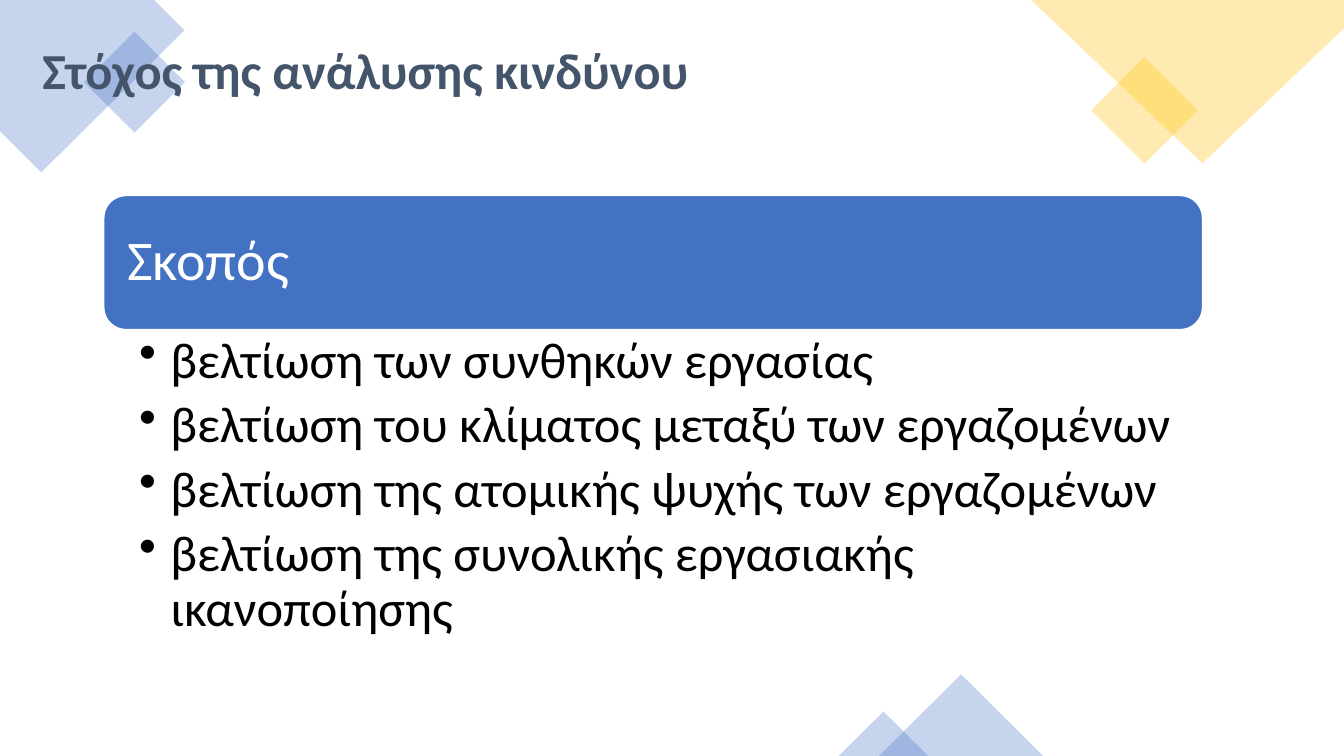
"""Build the slide on the goal of risk analysis."""
from dataclasses import dataclass

import lxml.etree
import pptx
import pptx.dml.color
import pptx.enum.shapes
import pptx.enum.text
import pptx.oxml.ns
import pptx.util

Pt = pptx.util.Pt
MSO_SHAPE = pptx.enum.shapes.MSO_SHAPE
ANCHOR = pptx.enum.text.MSO_ANCHOR


@dataclass(frozen=True)
class Theme:
    """Colours, font and type sizes of the slide."""
    blue: str = "4472C4"
    yellow: str = "FFC000"
    bar: str = "4372C3"
    white: str = "FFFFFF"
    heading: str = "44546A"
    body: str = "000000"
    font: str = "Calibri"
    body_size: float = 36
    bar_size: float = 40
    decor_opacity: int = 30


@dataclass(frozen=True)
class Box:
    """Position and size in points."""
    left: float
    top: float
    width: float
    height: float

    def lengths(self) -> tuple:
        """Return the four lengths for python-pptx."""
        return Pt(self.left), Pt(self.top), Pt(self.width), Pt(self.height)


@dataclass(frozen=True)
class Ornament:
    """A translucent preset shape."""
    kind: MSO_SHAPE
    box: Box
    color: str
    rotation: float = 0


@dataclass(frozen=True)
class Corner:
    """A translucent outline cut off by the slide edge."""
    points: tuple
    color: str


THEME = Theme()
CORNERS = (
    Corner(((0, 0), (110.16, 0), (131.76, 21.6), (29.52, 123.12), (0, 93.6)), THEME.blue),
    Corner(((960, 0), (736.56, 0), (858.96, 116.64), (960, 20.16)), THEME.yellow),
)
ORNAMENTS = (
    Ornament(MSO_SHAPE.RECTANGLE, Box(70.56, 33.12, 51.12, 51.12), THEME.blue, 315),
    Ornament(MSO_SHAPE.RECTANGLE, Box(790.56, 51.84, 54, 54), THEME.yellow, 315),
    Ornament(MSO_SHAPE.ISOSCELES_TRIANGLE, Box(627.84, 481.68, 117.36, 58.32), THEME.blue),
    Ornament(MSO_SHAPE.ISOSCELES_TRIANGLE, Box(599.04, 508.32, 64.08, 31.68), THEME.blue),
)
TITLE = "Στόχος της ανάλυσης κινδύνου"
PURPOSE = "Σκοπός"
GOALS = (
    "βελτίωση των συνθηκών εργασίας",
    "βελτίωση του κλίματος μεταξύ των εργαζομένων",
    "βελτίωση της ατομικής ψυχής των εργαζομένων",
    "βελτίωση της συνολικής εργασιακής ικανοποίησης",
)
TITLE_BOX = Box(23.04, 14.4, 828, 69.84)
PURPOSE_BOX = Box(74.16, 139.68, 784.8, 95.76)
GOALS_BOX = Box(74.16, 235.44, 784.8, 233.28)
BULLET_INDENT = 22.32


def rgb(color: str) -> pptx.dml.color.RGBColor:
    """Turn a hex string into a colour."""
    return pptx.dml.color.RGBColor.from_string(color)


def fill_translucent(shape, color: str) -> None:
    """Give a decoration its see-through fill and no outline."""
    shape.shadow.inherit = False
    shape.fill.solid()
    shape.fill.fore_color.rgb = rgb(color)
    shape.line.fill.background()
    color_node = shape.fill._xPr.find(".//" + pptx.oxml.ns.qn("a:srgbClr"))
    alpha = lxml.etree.SubElement(color_node, pptx.oxml.ns.qn("a:alpha"))
    alpha.set("val", str(THEME.decor_opacity * 1000))


def add_corner(slide, corner: Corner) -> None:
    """Draw one corner outline."""
    builder = slide.shapes.build_freeform(*map(Pt, corner.points[0]))
    builder.add_line_segments([(Pt(x), Pt(y)) for x, y in corner.points[1:]], close=True)
    fill_translucent(builder.convert_to_shape(), corner.color)


def add_ornament(slide, ornament: Ornament) -> None:
    """Draw one preset decoration."""
    shape = slide.shapes.add_shape(ornament.kind, *ornament.box.lengths())
    shape.rotation = ornament.rotation
    fill_translucent(shape, ornament.color)


def set_frame(frame, anchor: ANCHOR, insets: tuple) -> None:
    """Set wrapping, anchoring and left, top, right, bottom insets."""
    frame.word_wrap = True
    frame.auto_size = pptx.enum.text.MSO_AUTO_SIZE.NONE
    frame.vertical_anchor = anchor
    frame.margin_left, frame.margin_top, frame.margin_right, frame.margin_bottom = map(Pt, insets)


def format_paragraph(paragraph, size: float, color: str, bold: bool = False,
                     spacing: float = 1) -> None:
    """Left-align a paragraph and format its runs."""
    paragraph.alignment = pptx.enum.text.PP_ALIGN.LEFT
    paragraph.line_spacing = spacing
    for run in paragraph.runs:
        run.font.name = THEME.font
        run.font.size = Pt(size)
        run.font.bold = bold
        run.font.color.rgb = rgb(color)


def add_bullet(paragraph) -> None:
    """Give a paragraph a hanging round bullet."""
    properties = paragraph._p.get_or_add_pPr()
    properties.set("marL", str(Pt(BULLET_INDENT)))
    properties.set("indent", str(-Pt(BULLET_INDENT)))
    bullet = lxml.etree.SubElement(properties, pptx.oxml.ns.qn("a:buChar"))
    bullet.set("char", "•")


def place_title(slide) -> None:
    """Fill the title placeholder and bring it in front of the decorations."""
    title = slide.shapes.title
    title.left, title.top, title.width, title.height = TITLE_BOX.lengths()
    title.text_frame.text = TITLE
    set_frame(title.text_frame, ANCHOR.MIDDLE, (7.2, 3.6, 7.2, 3.6))
    format_paragraph(title.text_frame.paragraphs[0], THEME.body_size, THEME.heading, bold=True)
    slide.shapes._spTree.append(title._element)


def add_purpose(slide) -> None:
    """Draw the rounded bar that heads the list."""
    bar = slide.shapes.add_shape(MSO_SHAPE.ROUNDED_RECTANGLE, *PURPOSE_BOX.lengths())
    bar.shadow.inherit = False
    bar.fill.solid()
    bar.fill.fore_color.rgb = rgb(THEME.bar)
    bar.line.color.rgb = rgb(THEME.white)
    bar.line.width = Pt(1)
    bar.text_frame.text = PURPOSE
    set_frame(bar.text_frame, ANCHOR.MIDDLE, (12, 12, 12, 12))
    format_paragraph(bar.text_frame.paragraphs[0], THEME.bar_size, THEME.white, spacing=0.9)


def add_goals(slide) -> None:
    """Write the bulleted goals."""
    frame = slide.shapes.add_textbox(*GOALS_BOX.lengths()).text_frame
    set_frame(frame, ANCHOR.TOP, (25.2, 3.6, 20.16, 3.6))
    frame.text = "\n".join(GOALS)
    for index, goal in enumerate(frame.paragraphs):
        format_paragraph(goal, THEME.body_size, THEME.body, spacing=0.9)
        goal.space_before = Pt(7.2 if index else 0)
        add_bullet(goal)


def main() -> None:
    """Build and save the presentation."""
    deck = pptx.Presentation()
    deck.slide_width, deck.slide_height = Pt(960), Pt(540)
    slide = deck.slides.add_slide(deck.slide_layouts.get_by_name("Title Only"))
    for corner in CORNERS:
        add_corner(slide, corner)
    for ornament in ORNAMENTS:
        add_ornament(slide, ornament)
    place_title(slide)
    add_purpose(slide)
    add_goals(slide)
    deck.save("out.pptx")


if __name__ == "__main__":
    main()
